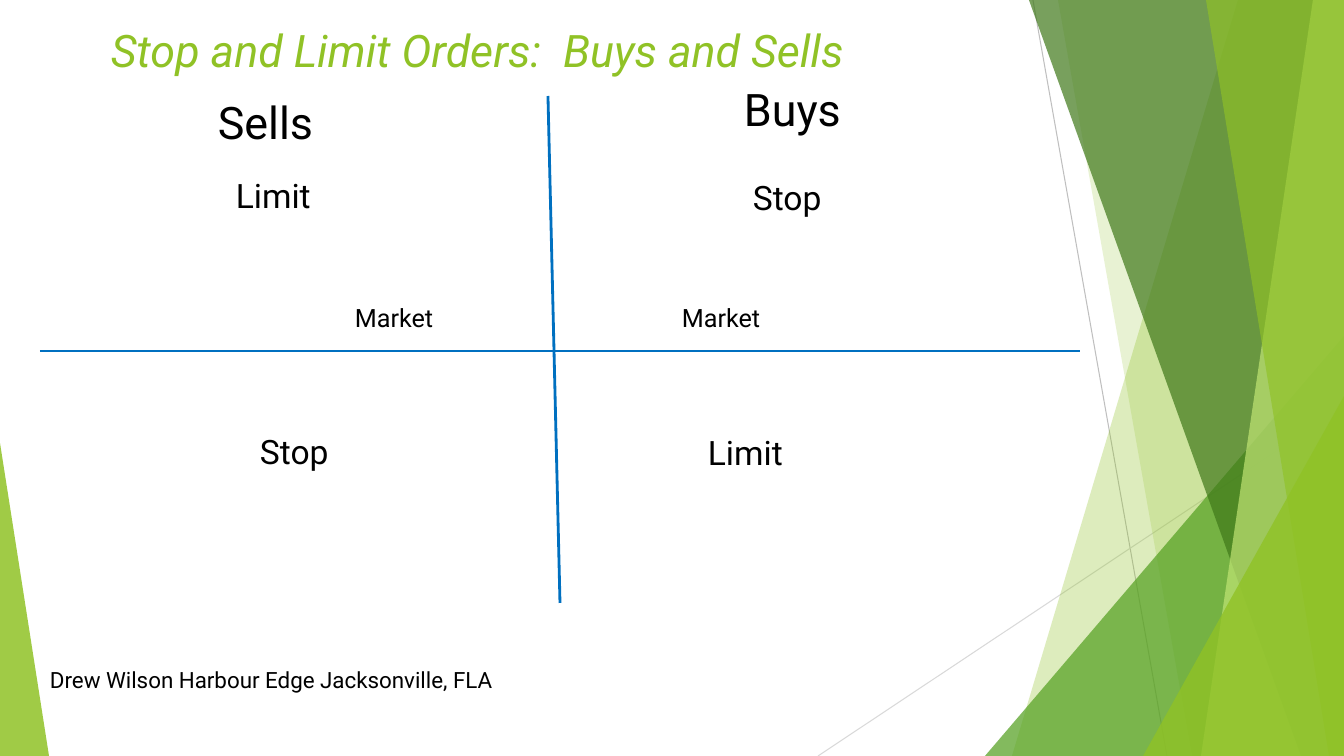
"""Build the stop and limit orders slide with its faceted green border."""
import pptx
import pptx.util
import pptx.dml.color
import pptx.enum.shapes
import pptx.enum.text
import pptx.oxml
import pptx.oxml.ns

RGB = pptx.dml.color.RGBColor
LIME = RGB(0x90, 0xC2, 0x26)
GREEN = RGB(0x54, 0xA0, 0x21)
FOREST = RGB(0x3F, 0x78, 0x19)
PALE = RGB(0xC0, 0xE4, 0x74)
BLUE = RGB(0x00, 0x70, 0xC0)
GREY = RGB(0xBF, 0xBF, 0xBF)
LIGHT_GREY = RGB(0xD9, 0xD9, 0xD9)
BLACK = RGB(0, 0, 0)

WIDTH, HEIGHT = 1344, 756
SCALE = 914400 / 100.8
FONT = "Roboto"

BORDER_LINES = [
    ((1033, 0), (1167, HEIGHT), GREY, 0.75),
    ((WIDTH, 406), (818, HEIGHT), LIGHT_GREY, 0.75),
]
AXES = [
    ((548, 96), (560, 603), BLUE, 2),
    ((40, 351), (1080, 351), BLUE, 2),
]

# Each band runs from its top x to its bottom x and fills to the right edge.
BANDS = "band"
TRIANGLE = "triangle"
FACETS = [
    (BANDS, (1238, 1012), LIME, 30),
    (BANDS, (1058, 1192), LIME, 20),
    (TRIANGLE, (985, 336, 359, 1), GREEN, 72),
    (BANDS, (1029, 1301), FOREST, 70),
    (BANDS, (1313, 1201), PALE, 70),
    (BANDS, (1206, 1329), LIME, 65),
    (TRIANGLE, (1143, 396, 201, 1), LIME, 80),
    (TRIANGLE, (0, 443, 49, 0), LIME, 85),
]

HEADING = {"size": 32}
ORDER = {"size": 24}
MARKET = {"size": 18}
CREDIT = {"size": 16}
TITLE = {"size": 32, "italic": True, "color": LIME}
TEXTS = [
    ("Sells", (208, 90, 214, 65), HEADING),
    ("Market", (345, 297, 278, 40), MARKET),
    ("Market", (672, 297, 215, 40), MARKET),
    ("Buys", (734, 77, 256, 65), HEADING),
    ("Limit", (226, 170, 214, 50), ORDER),
    ("Stop", (743, 172, 157, 50), ORDER),
    ("Stop", (250, 426, 176, 50), ORDER),
    ("Limit", (698, 427, 253, 50), ORDER),
    ("Drew Wilson Harbour Edge Jacksonville, FLA", (40, 661, 568, 37), CREDIT),
    ("Stop and Limit Orders:  Buys and Sells", (101, 18, 849, 65), TITLE),
]


def emu(*lengths):
    return [round(length * SCALE) for length in lengths]


def add_line(page, start, end, color, weight):
    line = page.shapes.add_connector(
        pptx.enum.shapes.MSO_CONNECTOR.STRAIGHT, *emu(*start, *end))
    line.line.color.rgb = color
    line.line.width = pptx.util.Pt(weight)
    pptx.oxml.ns.qn("a:effectLst")
    line._element.spPr.append(
        pptx.oxml.parse_xml(f"<a:effectLst {pptx.oxml.ns.nsdecls('a')}/>"))


def add_facet(page, kind, geometry, color, opacity):
    if kind == BANDS:
        top, bottom = geometry
        builder = page.shapes.build_freeform(top, 0, scale=SCALE)
        builder.add_line_segments(
            [(WIDTH, 0), (WIDTH, HEIGHT), (bottom, HEIGHT)], close=True)
        facet = builder.convert_to_shape()
    else:
        left, top, width, apex = geometry
        facet = page.shapes.add_shape(
            pptx.enum.shapes.MSO_SHAPE.ISOSCELES_TRIANGLE,
            *emu(left, top, width, HEIGHT - top))
        facet.adjustments[0] = apex
    facet.shadow.inherit = False
    facet.line.fill.background()
    facet.fill.solid()
    facet.fill.fore_color.rgb = color
    tint = facet._element.spPr.find(".//" + pptx.oxml.ns.qn("a:srgbClr"))
    tint.append(pptx.oxml.parse_xml(
        f"<a:alpha {pptx.oxml.ns.nsdecls('a')} val='{opacity * 1000}'/>"))


def add_text(page, words, place, style):
    box = page.shapes.add_textbox(*emu(*place))
    box.text_frame.word_wrap = True
    box.text_frame.auto_size = pptx.enum.text.MSO_AUTO_SIZE.SHAPE_TO_FIT_TEXT
    span = box.text_frame.paragraphs[0].add_run()
    span.text = words
    span.font.color.rgb = style.get("color", BLACK)
    values = {
        "name": FONT,
        "size": pptx.util.Pt(style["size"]),
        "italic": style.get("italic"),
    }
    for name, value in values.items():
        setattr(span.font, name, value)


def main():
    deck = pptx.Presentation()
    deck.slide_width, deck.slide_height = emu(WIDTH, HEIGHT)
    page = deck.slides.add_slide(deck.slide_layouts[6])
    for line in BORDER_LINES:
        add_line(page, *line)
    for facet in FACETS:
        add_facet(page, *facet)
    for axis in AXES:
        add_line(page, *axis)
    for text in TEXTS:
        add_text(page, *text)
    deck.save("out.pptx")


if __name__ == "__main__":
    main()
